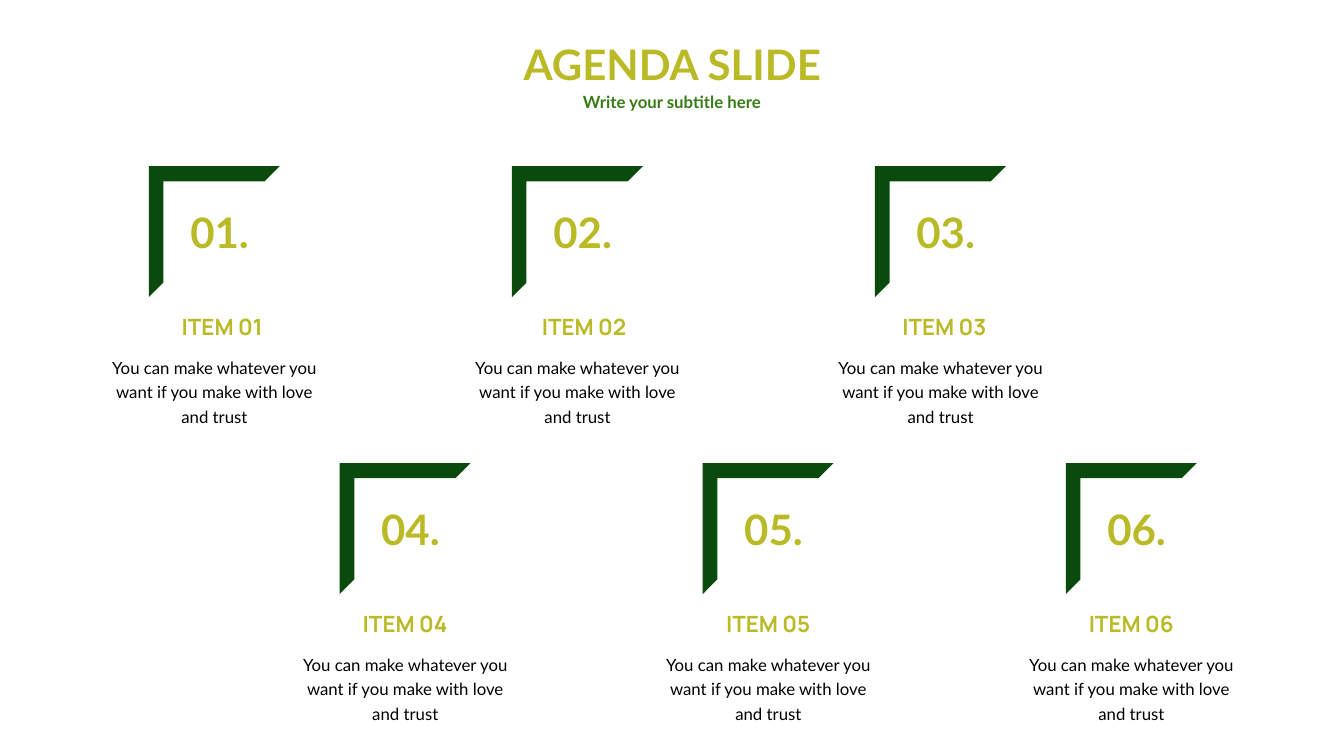
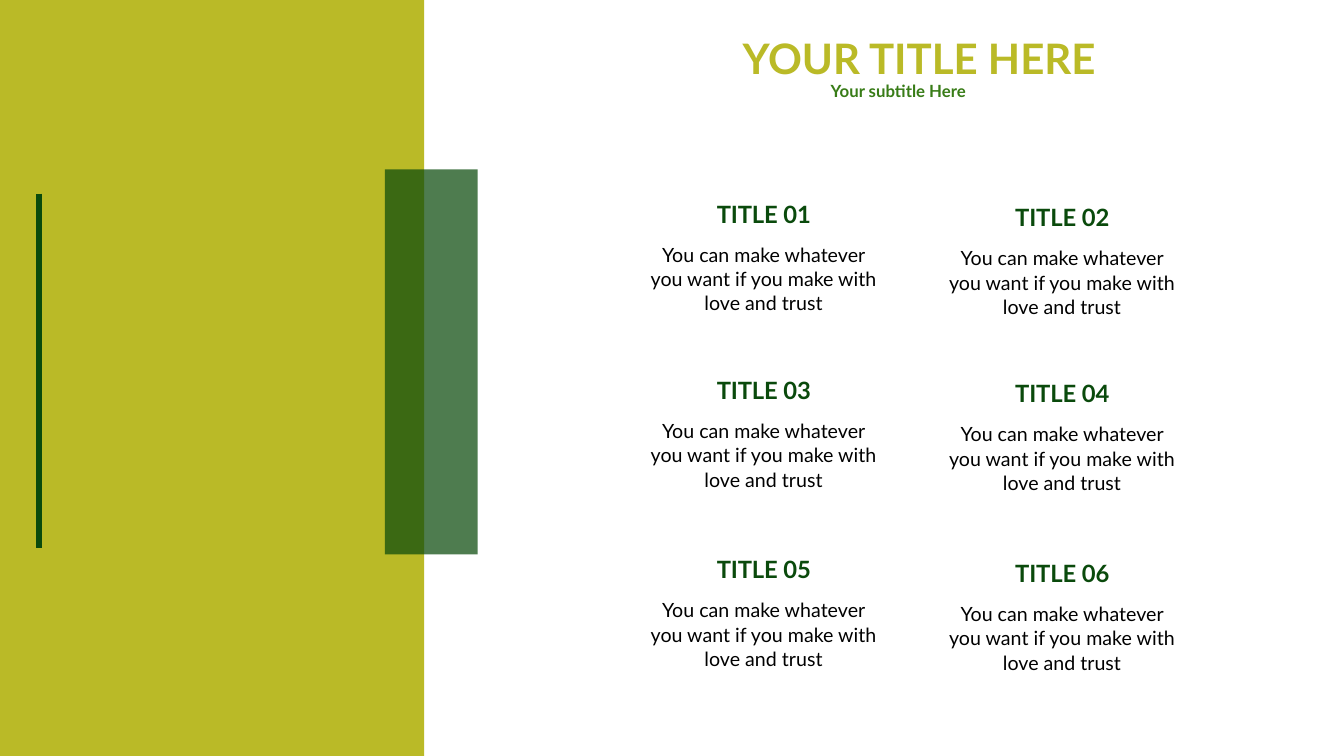
from pptx import Presentation
from pptx.dml.color import RGBColor
from pptx.enum.shapes import MSO_CONNECTOR, MSO_SHAPE
from pptx.enum.text import MSO_ANCHOR as Anchor, MSO_AUTO_SIZE as AutoSize, PP_ALIGN as Align
from pptx.oxml.ns import qn
from pptx.util import Cm, Pt
from lxml.etree import SubElement

COLORS = {"lime": "BABA27", "forest": "0A4A0C", "leaf": "387C17", "black": "000000"}
TEXT_FONT, ITEM_FONT = "Lato", "Manrope"
TITLE_STYLE = dict(size=30, color="lime", bold=True, wrap=False)
SUBTITLE_STYLE = dict(size=12, color="leaf", bold=True)
BODY_STYLE = dict(color="black", line_spacing=17.5)
TIGHT_INSETS = (0.13, 0.08)

DESCRIPTION = "You can make whatever you want if you make with love and trust"

# All positions and sizes are in centimetres.
AGENDA_ROWS = [
    {"left": 3.75, "top": 4.19, "items": [("01", 0.2), ("02", 0.17), ("03", 0.1)]},
    {"left": 8.56, "top": 11.67, "items": [("04", 0), ("05", 0), ("06", 0)]},
]  # each item: number, shift of its heading to the right
AGENDA_PITCH = 9.15
FRAME_SIZE = 3.3

TOPIC_ROWS = [(4.88, ("01", "02")), (9.32, ("03", "04")), (13.84, ("05", "06"))]
TOPIC_LEFT, TOPIC_PITCH, TOPIC_STEP_DOWN = 16.71, 7.52, 0.09


def rgb(name):
    return RGBColor.from_string(COLORS[name])


def add_text(slide, text, left, top, width, height, *, size, color, font=TEXT_FONT,
             bold=False, anchor=Anchor.TOP, wrap=True, line_spacing=None,
             insets=None, spacing=None):
    box = slide.shapes.add_textbox(Cm(left), Cm(top), Cm(width), Cm(height))
    frame = box.text_frame
    frame.word_wrap = wrap
    frame.auto_size = AutoSize.SHAPE_TO_FIT_TEXT
    frame.vertical_anchor = anchor
    if insets:
        frame.margin_left = frame.margin_right = Cm(insets[0])
        frame.margin_top = frame.margin_bottom = Cm(insets[1])
    paragraph = frame.paragraphs[0]
    paragraph.alignment = Align.CENTER
    if line_spacing:
        paragraph.line_spacing = Pt(line_spacing)
    run = paragraph.add_run()
    run.text = text
    run.font.name, run.font.size, run.font.bold = font, Pt(size), bold
    run.font.color.rgb = rgb(color)
    if spacing:
        run._r.get_or_add_rPr().set("spc", str(round(spacing * 100)))


def add_filled_shape(slide, kind, left, top, width, height, color, opacity=100):
    shape = slide.shapes.add_shape(kind, Cm(left), Cm(top), Cm(width), Cm(height))
    shape.shadow.inherit = False
    shape.fill.solid()
    shape.fill.fore_color.rgb = rgb(color)
    shape.line.fill.background()
    if opacity < 100:
        fill_color = shape._element.spPr.find(qn("a:solidFill"))[0]
        SubElement(fill_color, qn("a:alpha")).set("val", str(opacity * 1000))
    return shape


def add_vertical_line(slide, x, top, bottom, color, width):
    line = slide.shapes.add_connector(MSO_CONNECTOR.STRAIGHT, Cm(x), Cm(top), Cm(x), Cm(bottom))
    line.line.color.rgb = rgb(color)
    line.line.width = Pt(width)
    SubElement(line._element.spPr, qn("a:effectLst"))


def add_agenda_item(slide, number, left, top, heading_shift):
    corner = add_filled_shape(slide, MSO_SHAPE.HALF_FRAME, left, top,
                              FRAME_SIZE, FRAME_SIZE, "forest")
    corner.adjustments[0], corner.adjustments[1] = 0.115, 0.112
    add_text(slide, f"{number}.", left + 0.78, top + 0.88, 2.01, 1.55,
             anchor=Anchor.MIDDLE, **TITLE_STYLE)
    add_text(slide, f"ITEM {number}", left + 0.29 + heading_shift, top + 3.56, 2.72, 0.94,
             size=16, color="lime", font=ITEM_FONT, bold=True, anchor=Anchor.BOTTOM, wrap=False)
    add_text(slide, DESCRIPTION, left - 1.23, top + 4.63, 5.77, 1.98,
             size=12, insets=TIGHT_INSETS, **BODY_STYLE)


def add_topic(slide, number, left, top):
    add_text(slide, f"TITLE {number}", left, top, 5.08, 0.99, size=17, color="forest",
             bold=True, anchor=Anchor.BOTTOM, spacing=-0.1)
    add_text(slide, DESCRIPTION, left - 0.64, top + 1.08, 6.35, 2.13, size=14, **BODY_STYLE)


def build_agenda(slide):
    add_text(slide, "AGENDA SLIDE", 12.88, 0.84, 8.13, 1.55, **TITLE_STYLE)
    add_text(slide, "Write your subtitle here", 14.33, 2.18, 5.21, 0.76,
             wrap=False, **SUBTITLE_STYLE)
    for row in AGENDA_ROWS:
        for column, (number, shift) in enumerate(row["items"]):
            add_agenda_item(slide, number, row["left"] + column * AGENDA_PITCH,
                            row["top"], shift)


def build_topics(slide):
    add_filled_shape(slide, MSO_SHAPE.RECTANGLE, 0, 0, 10.69, 19.05, "lime")
    add_filled_shape(slide, MSO_SHAPE.RECTANGLE, 9.7, 4.27, 2.34, 9.7, "forest", opacity=72)
    add_vertical_line(slide, 0.99, 4.88, 13.82, "forest", 4.5)
    add_text(slide, "YOUR TITLE HERE", 18.44, 0.69, 9.45, 1.55, **TITLE_STYLE)
    add_text(slide, "Your subtitle Here", 18.97, 1.85, 7.34, 0.71,
             line_spacing=17.5, insets=TIGHT_INSETS, **SUBTITLE_STYLE)
    for top, numbers in TOPIC_ROWS:
        for column, number in enumerate(numbers):
            add_topic(slide, number, TOPIC_LEFT + column * TOPIC_PITCH,
                      top + column * TOPIC_STEP_DOWN)


def main():
    presentation = Presentation()
    presentation.slide_width, presentation.slide_height = Cm(33.87), Cm(19.05)
    blank = presentation.slide_layouts[6]
    for build in (build_agenda, build_topics):
        build(presentation.slides.add_slide(blank))
    presentation.save("out.pptx")


if __name__ == "__main__":
    main()
